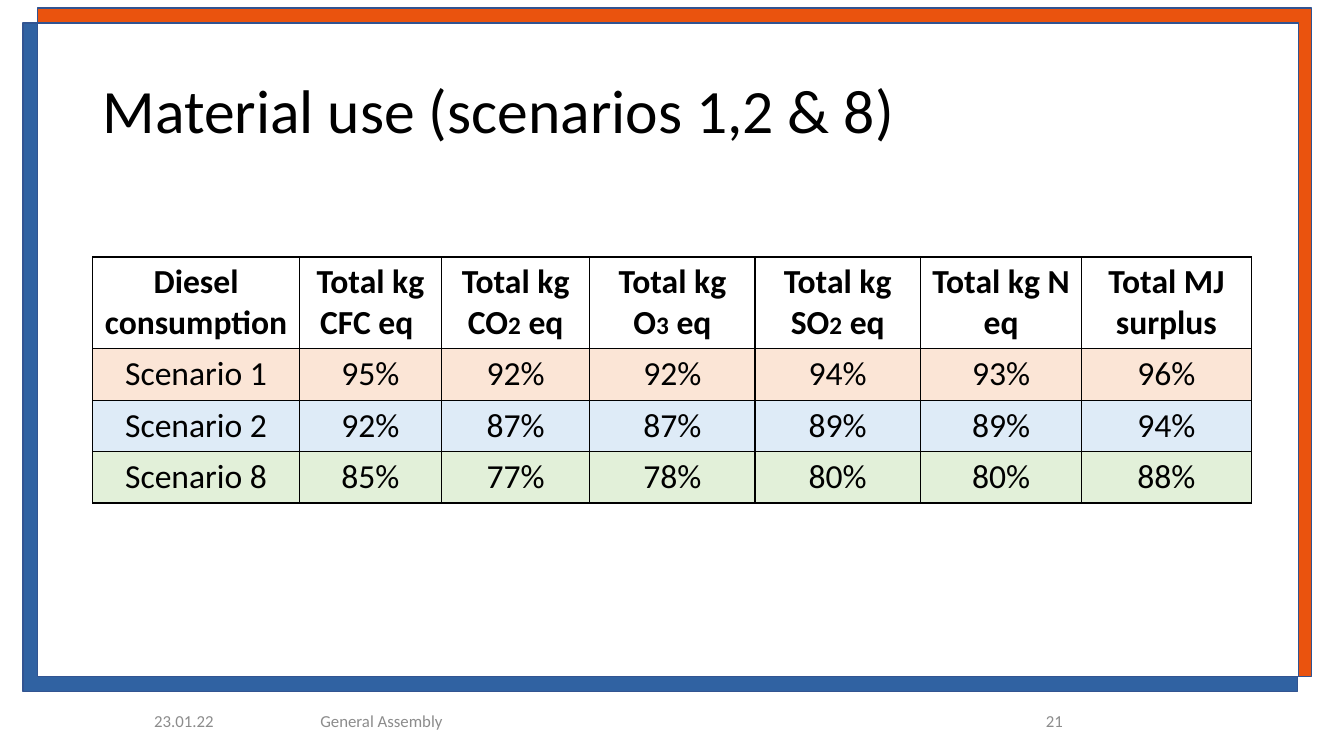
"""Build the material use slide with its framed background and scenario table."""
from pptx import Presentation
from pptx.dml.color import RGBColor
from pptx.enum.shapes import MSO_SHAPE
from pptx.enum.text import MSO_ANCHOR, PP_ALIGN
from pptx.oxml import parse_xml
from pptx.oxml.ns import nsdecls
from pptx.util import Inches, Pt

FONT = "Calibri"
BLACK = RGBColor(0x00, 0x00, 0x00)
WHITE = RGBColor(0xFF, 0xFF, 0xFF)
GREY = RGBColor(0x8C, 0x8C, 0x8C)
ORANGE = RGBColor(0xEA, 0x53, 0x0E)
BLUE = RGBColor(0x30, 0x62, 0xA2)
FRAME_LINE = RGBColor(0x32, 0x54, 0x91)
PEACH = RGBColor(0xFB, 0xE5, 0xD6)
PALE_BLUE = RGBColor(0xDE, 0xEB, 0xF7)
PALE_GREEN = RGBColor(0xE2, 0xF0, 0xD9)

FRAMES = [
    (0.37, 0.08, 12.64, 6.63, ORANGE),
    (0.23, 0.23, 12.64, 6.63, BLUE),
    (0.37, 0.23, 12.51, 6.48, WHITE),
]
FOOTERS = [
    ("23.01.22", 1.43, 1.19, PP_ALIGN.LEFT),
    ("General Assembly", 3.08, 4.27, PP_ALIGN.LEFT),
    ("21", 8.92, 1.72, PP_ALIGN.RIGHT),
]
COLUMN_WIDTHS = [2.05, 1.41, 1.47, 1.64, 1.64, 1.6, 1.68]
HEADERS = [
    ["Diesel consumption"],
    ["Total kg CFC eq "],
    ["Total kg CO", "2", " eq"],
    ["Total kg O", "3", " eq"],
    ["Total kg SO", "2", " eq"],
    ["Total kg N eq"],
    ["Total MJ surplus"],
]
SCENARIOS = [
    (PEACH, ["Scenario 1", "95%", "92%", "92%", "94%", "93%", "96%"]),
    (PALE_BLUE, ["Scenario 2", "92%", "87%", "87%", "89%", "89%", "94%"]),
    (PALE_GREEN, ["Scenario 8", "85%", "77%", "78%", "80%", "80%", "88%"]),
]


def add_run(paragraph, text, size, color, bold=False):
    """Append one styled run to a paragraph."""
    run = paragraph.add_run()
    run.text = text
    run.font.name = FONT
    run.font.size = Pt(size)
    run.font.bold = bold
    run.font.color.rgb = color


def add_frame(slide, left, top, width, height, color):
    """Add one outlined rectangle of the background frame."""
    shape = slide.shapes.add_shape(
        MSO_SHAPE.RECTANGLE, Inches(left), Inches(top), Inches(width), Inches(height))
    shape.shadow.inherit = False
    shape.fill.solid()
    shape.fill.fore_color.rgb = color
    shape.line.color.rgb = FRAME_LINE
    shape.line.width = Pt(1)


def add_text(slide, text, left, top, width, height, size, color, align=PP_ALIGN.LEFT):
    """Add a vertically centred text box and return its paragraph."""
    box = slide.shapes.add_textbox(
        Inches(left), Inches(top), Inches(width), Inches(height))
    box.text_frame.word_wrap = True
    box.text_frame.vertical_anchor = MSO_ANCHOR.MIDDLE
    paragraph = box.text_frame.paragraphs[0]
    paragraph.alignment = align
    add_run(paragraph, text, size, color)
    return paragraph


def add_borders(cell):
    """Draw a thin black line on every side of a cell."""
    properties = cell._tc.get_or_add_tcPr()
    for side in ("lnL", "lnR", "lnT", "lnB"):
        properties.append(parse_xml(
            f'<a:{side} {nsdecls("a")} w="{Pt(1)}"><a:solidFill>'
            f'<a:srgbClr val="{BLACK}"/></a:solidFill></a:{side}>'))


def fill_cell(cell, parts, color=None, bold=False):
    """Write the runs of a cell, with digits of formulas smaller."""
    cell.vertical_anchor = MSO_ANCHOR.MIDDLE
    paragraph = cell.text_frame.paragraphs[0]
    paragraph.alignment = PP_ALIGN.CENTER
    for part in parts:
        add_run(paragraph, part, 18 if part.isdigit() else 24, BLACK, bold)
    add_borders(cell)
    if color is None:
        cell.fill.background()
    else:
        cell.fill.solid()
        cell.fill.fore_color.rgb = color


def add_scenario_table(slide):
    """Add the table of scenario percentages."""
    table = slide.shapes.add_table(
        len(SCENARIOS) + 1, len(HEADERS),
        Inches(0.92), Inches(2.55), Inches(11.49), Inches(2.44)).table
    table.first_row = False
    table.horz_banding = False
    for column, width in zip(table.columns, COLUMN_WIDTHS):
        column.width = Inches(width)
    for index, row in enumerate(table.rows):
        row.height = Inches(0.51 if index else 0.91)
    for column, parts in enumerate(HEADERS):
        fill_cell(table.cell(0, column), parts, bold=True)
    for row, (color, values) in enumerate(SCENARIOS, start=1):
        for column, value in enumerate(values):
            fill_cell(table.cell(row, column), [value], color)


def main():
    """Assemble and save the slide."""
    presentation = Presentation()
    presentation.slide_width = Inches(13.33)
    presentation.slide_height = Inches(7.5)
    slide = presentation.slides.add_slide(presentation.slide_layouts[6])
    for frame in FRAMES:
        add_frame(slide, *frame)
    title = add_text(slide, "Material use (scenarios 1,2 & 8)",
                     0.92, 0.4, 11.5, 1.45, 44, BLACK)
    title.line_spacing = 0.9
    for text, left, width, align in FOOTERS:
        add_text(slide, text, left, 6.95, width, 0.4, 12, GREY, align)
    add_scenario_table(slide)
    presentation.save("out.pptx")


if __name__ == "__main__":
    main()
